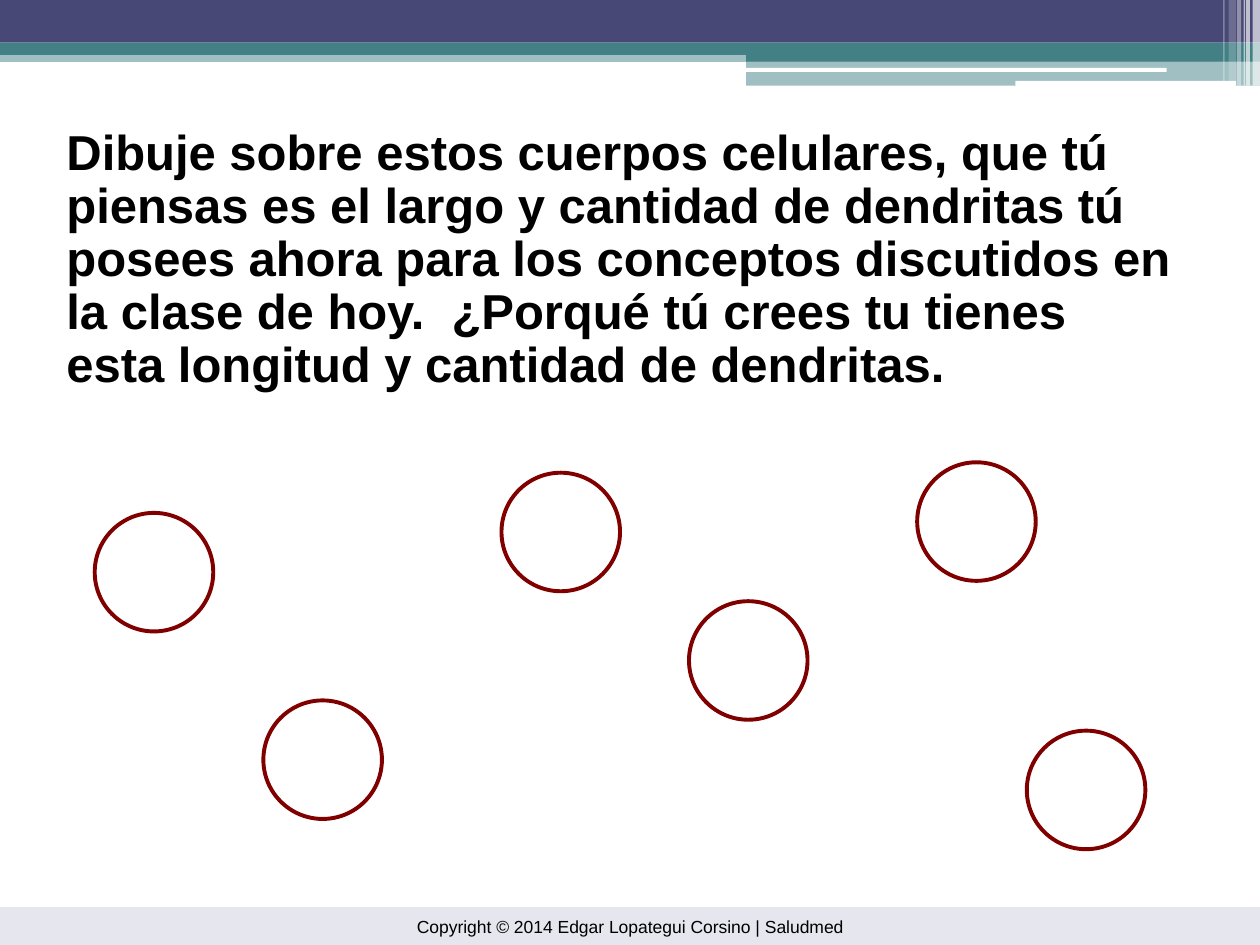
from lxml import etree
from pptx import Presentation
from pptx.dml.color import RGBColor
from pptx.enum.shapes import MSO_SHAPE
from pptx.enum.text import MSO_ANCHOR, PP_ALIGN
from pptx.oxml.ns import qn
from pptx.util import Cm, Pt


def color(hex_code):
    return RGBColor.from_string(hex_code)


def add_filled(kind, left, top, width, height, fill, opacity=100):
    """Add a borderless shape; lengths in centimetres, opacity in percent."""
    shape = slide.shapes.add_shape(kind, Cm(left), Cm(top), Cm(width), Cm(height))
    shape.shadow.inherit = False
    shape.line.fill.background()
    shape.fill.solid()
    shape.fill.fore_color.rgb = color(fill)
    if opacity < 100:
        fill_color = shape.fill._xPr.find(qn("a:solidFill"))[0]
        etree.SubElement(fill_color, qn("a:alpha")).set("val", str(opacity * 1000))
    return shape


NAVY, TEAL, WHITE, BLACK = "484876", "438086", "FFFFFF", "000000"
WIDTH = 25.4

presentation = Presentation()
presentation.slide_width = Cm(WIDTH)
presentation.slide_height = Cm(19.05)
slide = presentation.slides.add_slide(presentation.slide_layouts[6])

# Header bands
header_bands = [
    (0, 1.02, WIDTH, 0.23, TEAL, 50),
    (0, 0, WIDTH, 0.86, NAVY, 100),
    (0, 0.86, WIDTH, 0.25, TEAL, 100),
    (15.04, 0.99, 10.36, 0.25, TEAL, 100),
    (15.04, 1.22, 10.36, 0.51, TEAL, 50),
]
for band in header_bands:
    add_filled(MSO_SHAPE.RECTANGLE, *band)

for left, top, width, height in [(15.01, 1.37, 8.51, 0.08), (20.47, 1.63, 4.45, 0.1)]:
    add_filled(MSO_SHAPE.ROUNDED_RECTANGLE, left, top, width, height, WHITE)

# Translucent vertical stripes: left, width, height, opacity
stripes = [
    (25.25, 0.15, 1.73, 65),
    (25.12, 0.08, 1.73, 65),
    (25.07, 0.03, 1.73, 60),
    (24.94, 0.08, 1.73, 40),
    (24.77, 0.15, 1.63, 20),
    (24.66, 0.03, 1.63, 30),
]
for left, width, height, opacity in stripes:
    add_filled(MSO_SHAPE.RECTANGLE, left, 0, width, height, WHITE, opacity)

# Footer
footer = add_filled(MSO_SHAPE.RECTANGLE, 0, 18.29, WIDTH, 0.76, "E6E6EF")
footer.text_frame.vertical_anchor = MSO_ANCHOR.MIDDLE
paragraph = footer.text_frame.paragraphs[0]
paragraph.text = "Copyright © 2014 Edgar Lopategui Corsino | Saludmed"
paragraph.alignment = PP_ALIGN.CENTER
paragraph.font.name = "Arial"
paragraph.font.size = Pt(10)
paragraph.font.color.rgb = color(BLACK)

# Instructions
instructions = slide.shapes.add_textbox(Cm(1.09), Cm(2.46), Cm(23.01), Cm(5.59))
text_frame = instructions.text_frame
text_frame.word_wrap = True
text_frame.text = "\n".join([
    "Dibuje sobre estos cuerpos celulares, que tú",
    "piensas es el largo y cantidad de dendritas tú",
    "posees ahora para los conceptos discutidos en",
    "la clase de hoy.  ¿Porqué tú crees tu tienes",
    "esta longitud y cantidad de dendritas.",
])
for paragraph in text_frame.paragraphs:
    paragraph.line_spacing = 0.9
    paragraph.font.name = "Arial"
    paragraph.font.size = Pt(28)
    paragraph.font.bold = True
    paragraph.font.color.rgb = color(BLACK)

# Cell bodies
DIAMETER = Cm(2.39)
cell_positions = [
    (1.91, 10.34), (5.31, 14.12), (13.89, 12.12),
    (18.49, 9.32), (10.11, 9.53), (20.7, 14.73),
]
for left, top in cell_positions:
    cell_body = slide.shapes.add_shape(MSO_SHAPE.OVAL, Cm(left), Cm(top), DIAMETER, DIAMETER)
    cell_body.shadow.inherit = False
    cell_body.fill.background()
    cell_body.line.color.rgb = color("800000")
    cell_body.line.width = Pt(2.25)

presentation.save("out.pptx")
